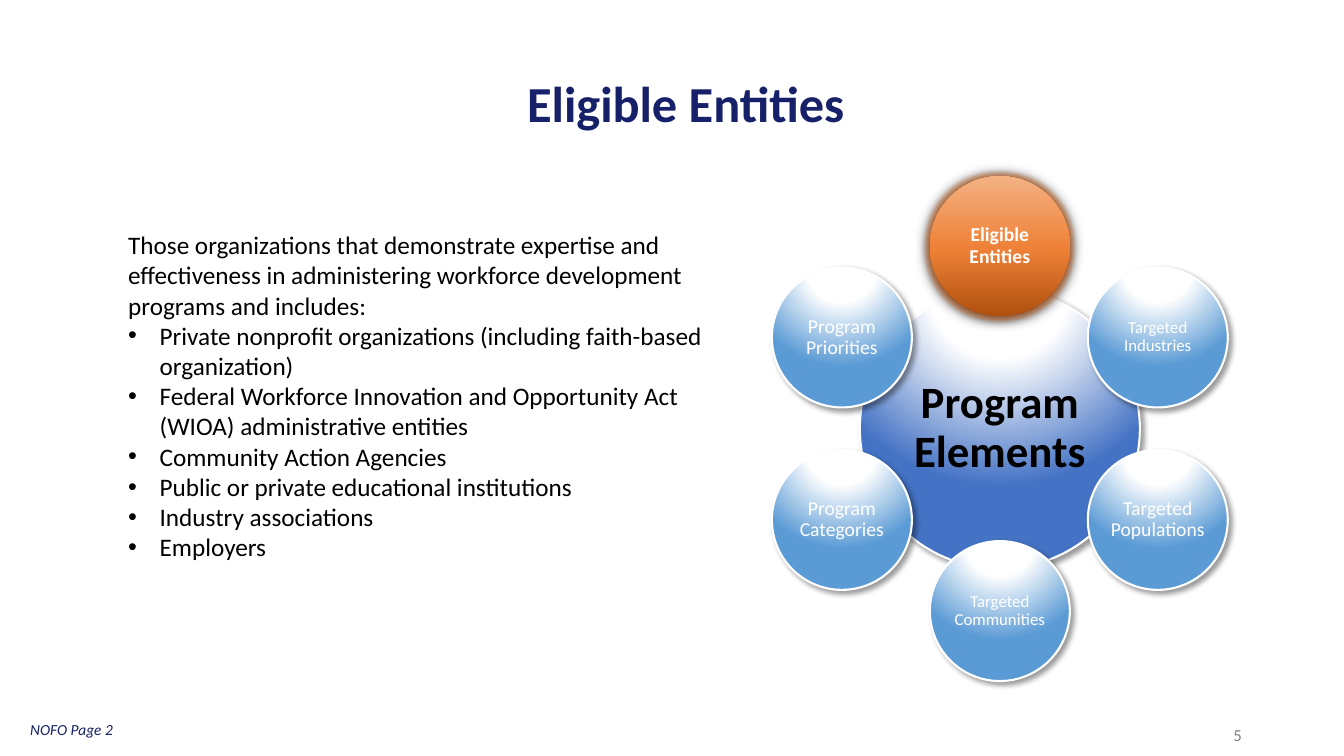
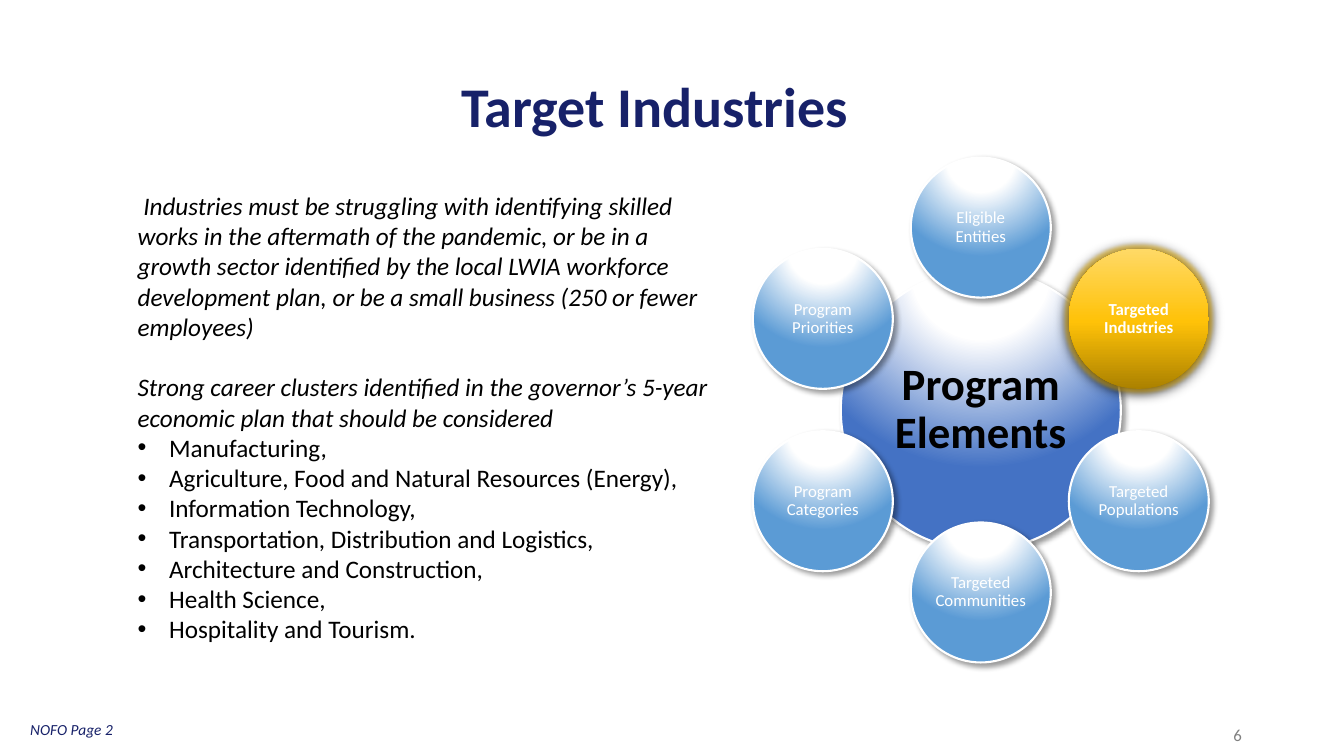
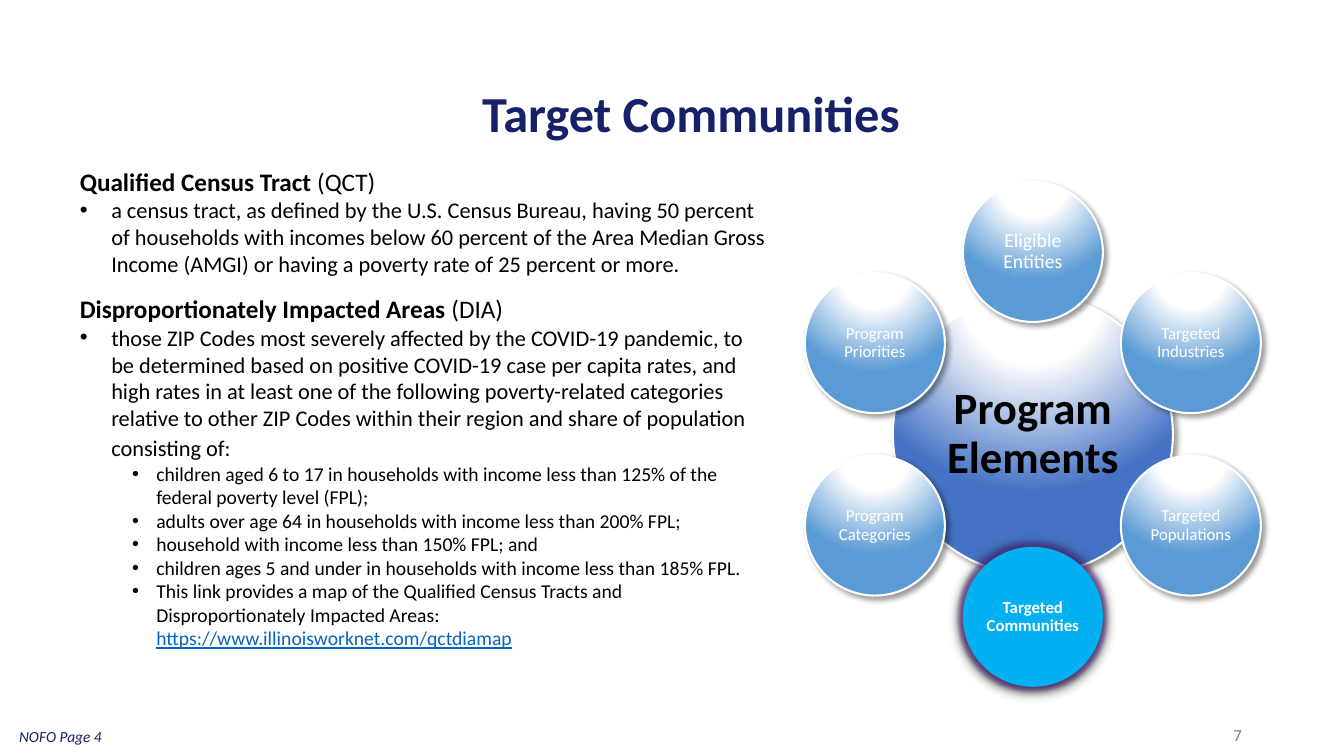
import math
from dataclasses import dataclass
from typing import Optional

import pptx
import pptx.dml.color
import pptx.enum.shapes
import pptx.enum.text
import pptx.oxml
import pptx.oxml.ns
import pptx.util

Pt = pptx.util.Pt
ALIGN = pptx.enum.text.PP_ALIGN
ANCHOR = pptx.enum.text.MSO_ANCHOR

FONT = "Calibri"
NAVY, BLACK, WHITE, GRAY = "172169", "000000", "FFFFFF", "808080"
HUB_BLUE, SATELLITE_BLUE, LINK_BLUE = "4472C4", "5B9BD5", "0563C1"

ELEMENTS = (
    "Eligible Entities", "Targeted Industries", "Targeted Populations",
    "Targeted Communities", "Program Categories", "Program Priorities",
)
HUB_DIAMETER, SATELLITE_DIAMETER, ORBIT_RADIUS = 200, 100, 130.3
# Left indent and hanging first line, by bullet level
BULLET_INDENTS = {1: (22.5, -22.5), 2: (54.7, -17.3)}


@dataclass
class Run:
    text: str
    size: float = 18
    color: str = BLACK
    bold: bool = False
    italic: bool = False
    underline: bool = False


@dataclass
class Paragraph:
    runs: list[Run]
    bullet_level: int = 0
    space_before: float = 0
    align: ALIGN = ALIGN.LEFT
    line_spacing: float = 1.0


@dataclass
class Box:
    left: float
    top: float
    width: float
    height: float


@dataclass
class Highlight:
    element: str
    stops: list[tuple[int, str]]
    glow: str


@dataclass
class Page:
    title: str
    title_box: Box
    title_size: float
    number: int
    footer: str
    footer_box: Box
    body: list[Paragraph]
    body_box: Box
    wheel_center: tuple[float, float]
    highlight: Highlight
    large_labels: tuple[str, ...] = ()


def rgb(color: str) -> pptx.dml.color.RGBColor:
    return pptx.dml.color.RGBColor.from_string(color)


def element(tag: str, content: str = "", attributes: str = ""):
    """Return a drawing element built from its tag, inner XML and attributes."""
    namespace = pptx.oxml.ns.nsdecls("a")
    return pptx.oxml.parse_xml(f"<a:{tag} {namespace} {attributes}>{content}</a:{tag}>")


def translucent(color: str, opacity: int) -> str:
    return f'<a:srgbClr val="{color}"><a:alpha val="{opacity * 1000}"/></a:srgbClr>'


def write(frame, paragraphs: list[Paragraph], inset: Optional[float] = None,
          anchor: ANCHOR = ANCHOR.TOP) -> None:
    frame.word_wrap = True
    frame.vertical_anchor = anchor
    if inset is not None:
        frame.margin_left = frame.margin_right = Pt(inset)
        frame.margin_top = frame.margin_bottom = Pt(inset)
    for index, item in enumerate(paragraphs):
        paragraph = frame.add_paragraph() if index else frame.paragraphs[0]
        if item.bullet_level:
            paragraph.level = item.bullet_level - 1
            left, hanging = BULLET_INDENTS[item.bullet_level]
            properties = paragraph._p.get_or_add_pPr()
            properties.set("marL", str(Pt(left)))
            properties.set("indent", str(Pt(hanging)))
            properties.append(element("buFont", attributes='typeface="Arial"'))
            properties.append(element("buChar", attributes='char="•"'))
        paragraph.alignment = item.align
        paragraph.line_spacing = item.line_spacing
        if item.space_before:
            paragraph.space_before = Pt(item.space_before)
        for part in item.runs:
            run = paragraph.add_run()
            run.text = part.text
            run.font.name = FONT
            run.font.size = Pt(part.size)
            run.font.bold = part.bold
            run.font.italic = part.italic
            run.font.underline = part.underline
            run.font.color.rgb = rgb(part.color)


def add_text(slide, box: Box, paragraphs: list[Paragraph], anchor: ANCHOR = ANCHOR.TOP) -> None:
    shape = slide.shapes.add_textbox(Pt(box.left), Pt(box.top), Pt(box.width), Pt(box.height))
    write(shape.text_frame, paragraphs, anchor=anchor)


def set_gradient(shape, stops: list[tuple[int, str]], direction: str) -> None:
    shape.fill.gradient()
    properties = shape._element.spPr
    colors = "".join(
        f'<a:gs pos="{position * 1000}"><a:srgbClr val="{color}"/></a:gs>'
        for position, color in stops
    )
    properties.replace(
        properties.find(pptx.oxml.ns.qn("a:gradFill")),
        element("gradFill", f"<a:gsLst>{colors}</a:gsLst>{direction}", 'rotWithShape="1"'),
    )


def set_shadow(shape, opacity: int, blur: float, distance: float, angle: int,
               glow: str = "") -> None:
    """Give the shape a black shadow, and a glow if a colour is given."""
    shape.shadow.inherit = False
    effects = shape._element.spPr.find(pptx.oxml.ns.qn("a:effectLst"))
    if glow:
        effects.append(element("glow", translucent(glow, 45), f'rad="{Pt(5)}"'))
    effects.append(element(
        "outerShdw", translucent(BLACK, opacity),
        f'blurRad="{Pt(blur)}" dist="{Pt(distance)}" dir="{angle * 60000}" '
        'algn="ctr" rotWithShape="0"',
    ))


def add_circle(slide, x: float, y: float, diameter: float, label: Run, inset: float):
    """Add a labelled circle centred on x, y."""
    circle = slide.shapes.add_shape(
        pptx.enum.shapes.MSO_SHAPE.OVAL,
        Pt(x - diameter / 2), Pt(y - diameter / 2), Pt(diameter), Pt(diameter),
    )
    write(circle.text_frame, [Paragraph([label], align=ALIGN.CENTER, line_spacing=0.9)],
          inset, ANCHOR.MIDDLE)
    return circle


def style_glossy(circle, color: str) -> None:
    set_gradient(
        circle, [(0, WHITE), (35, WHITE), (100, color)],
        '<a:path path="circle"><a:fillToRect l="50000" t="-80000" r="50000" b="180000"/></a:path>',
    )
    circle.line.color.rgb = rgb(WHITE)
    circle.line.width = Pt(1.5)
    set_shadow(circle, 40, 4, 3, 45)


def style_highlight(circle, highlight: Highlight) -> None:
    if len(highlight.stops) == 1:
        circle.fill.solid()
        circle.fill.fore_color.rgb = rgb(highlight.stops[0][1])
    else:
        set_gradient(circle, highlight.stops, '<a:lin ang="16200000" scaled="0"/>')
    circle.line.fill.background()
    set_shadow(circle, 100, 8.5, 1, 90, highlight.glow)


def add_wheel(slide, page: Page) -> None:
    """Draw the hub and its satellites, clockwise from the top."""
    x, y = page.wheel_center
    hub = add_circle(slide, x, y, HUB_DIAMETER, Run("Program Elements", 32, bold=True), 2.9)
    style_glossy(hub, HUB_BLUE)
    for index, name in enumerate(ELEMENTS):
        angle = math.tau * index / len(ELEMENTS)
        highlighted = name == page.highlight.element
        label = Run(name, 14 if name in page.large_labels else 12, WHITE, bold=highlighted)
        satellite = add_circle(
            slide, x + ORBIT_RADIUS * math.sin(angle), y - ORBIT_RADIUS * math.cos(angle),
            SATELLITE_DIAMETER, label, 1.2,
        )
        if highlighted:
            style_highlight(satellite, page.highlight)
        else:
            style_glossy(satellite, SATELLITE_BLUE)


def add_page(presentation, page: Page) -> None:
    slide = presentation.slides.add_slide(presentation.slide_layouts[6])
    title = Run(page.title, page.title_size, NAVY, bold=True)
    add_text(slide, page.title_box,
             [Paragraph([title], align=ALIGN.CENTER, line_spacing=0.9)], ANCHOR.MIDDLE)
    add_text(slide, Box(678.2, 510.5, 216, 28.8),
             [Paragraph([Run(str(page.number), 12, GRAY)], align=ALIGN.RIGHT)], ANCHOR.MIDDLE)
    add_wheel(slide, page)
    add_text(slide, page.body_box, page.body)
    add_text(slide, page.footer_box, [Paragraph([Run(page.footer, 11, NAVY, italic=True)])])


def bullets(texts: list[str], size: float = 18, level: int = 1) -> list[Paragraph]:
    return [Paragraph([Run(text, size)], level) for text in texts]


def heading(name: str, abbreviation: str, space_before: float = 0) -> Paragraph:
    return Paragraph([Run(f"{name} ", bold=True), Run(abbreviation)], space_before=space_before)


PAGES = [
    Page(
        title="Eligible Entities", title_box=Box(279.7, 53.6, 420.5, 44), title_size=36,
        number=5, footer="NOFO Page 2", footer_box=Box(14.4, 510.5, 168, 21),
        body=[
            Paragraph([Run("Those organizations that demonstrate expertise and effectiveness in "
                           "administering workforce development programs and includes:")]),
            *bullets([
                "Private nonprofit organizations (including faith-based organization)",
                "Federal Workforce Innovation and Opportunity Act (WIOA) administrative entities",
                "Community Action Agencies",
                "Public or private educational institutions",
                "Industry associations",
                "Employers",
            ]),
        ],
        body_box=Box(84.5, 160.3, 435, 269), wheel_center=(714.2, 306.2),
        highlight=Highlight("Eligible Entities",
                            [(0, "B0500F"), (48, "EE8137"), (100, "F4B183")], "ED7D31"),
        large_labels=("Eligible Entities", "Targeted Populations",
                      "Program Categories", "Program Priorities"),
    ),
    Page(
        title="Target Industries", title_box=Box(257.4, 56.2, 420.5, 44), title_size=40,
        number=6, footer="NOFO Page 2", footer_box=Box(14.4, 510.5, 168, 21),
        body=[
            Paragraph([Run(" Industries must be struggling with identifying skilled works in the "
                           "aftermath of the pandemic, or be in a growth sector identified by the "
                           "local LWIA workforce development plan, or be a small business "
                           "(250 or fewer employees)", italic=True)]),
            Paragraph([Run("Strong career clusters identified in the governor’s 5-year economic "
                           "plan that should be considered", italic=True)], space_before=21.6),
            *bullets([
                "Manufacturing,",
                "Agriculture, Food and Natural Resources (Energy),",
                "Information Technology,",
                "Transportation, Distribution and Logistics,",
                "Architecture and Construction,",
                "Health Science,",
                "Hospitality and Tourism.",
            ]),
        ],
        body_box=Box(91.2, 132.3, 428, 334), wheel_center=(700.6, 292.9),
        highlight=Highlight("Targeted Industries",
                            [(0, "AB8100"), (48, "FFC208"), (100, "FFD966")], "FFC000"),
    ),
    Page(
        title="Target Communities", title_box=Box(279.4, 61, 428.4, 44), title_size=36,
        number=7, footer="NOFO Page 4", footer_box=Box(6.5, 515.5, 168, 21),
        body=[
            heading("Qualified Census Tract", "(QCT)"),
            *bullets(["a census tract, as defined by the U.S. Census Bureau, having 50 percent of "
                      "households with incomes below 60 percent of the Area Median Gross Income "
                      "(AMGI) or having a poverty rate of 25 percent or more."], 16),
            heading("Disproportionately Impacted Areas", "(DIA)", 12),
            Paragraph([
                Run("those ZIP Codes most severely affected by the COVID-19 pandemic, to be "
                    "determined based on positive COVID-19 case per capita rates, and high rates "
                    "in at least one of the following poverty-related categories relative to "
                    "other ZIP Codes within their region and share of population "
                    "consisting of:", 16),
                Run(" "),
            ], 1),
            *bullets([
                "children aged 6 to 17 in households with income less than 125% of the federal "
                "poverty level (FPL);",
                "adults over age 64 in households with income less than 200% FPL;",
                "household with income less than 150% FPL; and",
                "children ages 5 and under in households with income less than 185% FPL.",
            ], 14, 2),
            Paragraph([
                Run("This link provides a map of the Qualified Census Tracts and "
                    "Disproportionately Impacted Areas: ", 14),
                Run("https://www.illinoisworknet.com/qctdiamap", 14, LINK_BLUE, underline=True),
            ], 2),
        ],
        body_box=Box(49.9, 115, 504.7, 363.6), wheel_center=(737.8, 310.3),
        highlight=Highlight("Targeted Communities", [(0, "00B0F0")], "7030A0"),
        large_labels=("Eligible Entities",),
    ),
]


def main() -> None:
    presentation = pptx.Presentation()
    presentation.slide_width = Pt(960)
    presentation.slide_height = Pt(540)
    for page in PAGES:
        add_page(presentation, page)
    presentation.save("out.pptx")


if __name__ == "__main__":
    main()
